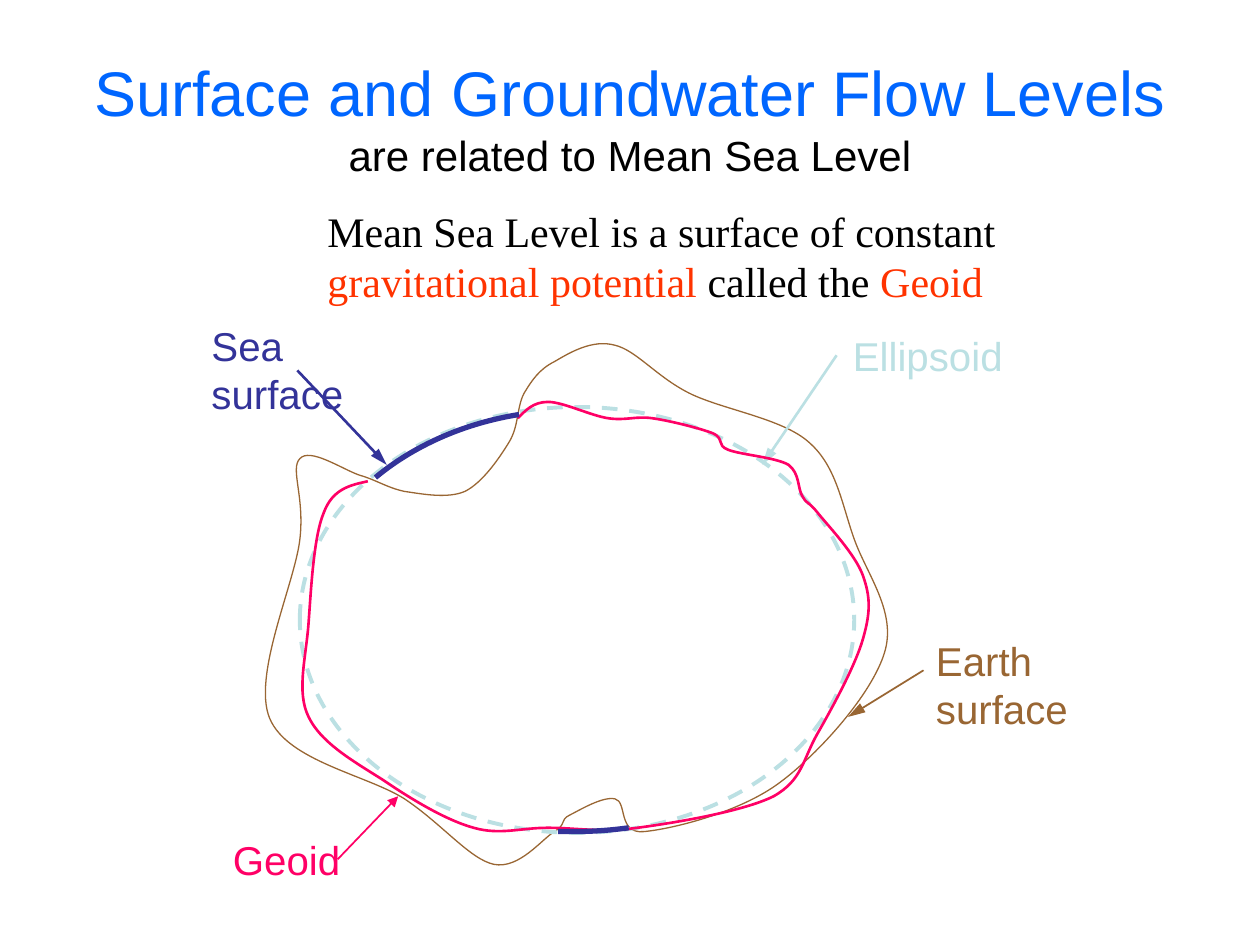
from lxml.etree import SubElement
from pptx import Presentation
from pptx.dml.color import RGBColor
from pptx.enum.dml import MSO_LINE
from pptx.enum.shapes import MSO_CONNECTOR, MSO_SHAPE
from pptx.enum.text import MSO_ANCHOR, PP_ALIGN
from pptx.oxml.ns import qn
from pptx.util import Pt

PX = 9144  # 100 px to the inch

BLACK = RGBColor(0x00, 0x00, 0x00)
TITLE_BLUE = RGBColor(0x00, 0x66, 0xFF)
HIGHLIGHT_RED = RGBColor(0xFF, 0x33, 0x00)
EARTH_BROWN = RGBColor(0x99, 0x66, 0x33)
ELLIPSOID_TEAL = RGBColor(0xBB, 0xE0, 0xE3)
SEA_BLUE = RGBColor(0x33, 0x33, 0x99)
GEOID_PINK = RGBColor(0xFF, 0x00, 0x66)

# Each curve is a start point, then two control points and an end point per segment.
EARTH_CURVE = [
    (285, 377),
    (299, 381), (307, 387), (321, 390),
    (335, 392), (355, 396), (369, 390),
    (383, 383), (396, 364), (404, 351),
    (412, 338), (410, 323), (416, 312),
    (422, 302), (428, 293), (440, 287),
    (452, 280), (470, 269), (488, 274),
    (505, 278), (521, 299), (547, 312),
    (573, 325), (621, 332), (642, 351),
    (664, 370), (668, 400), (678, 428),
    (688, 456), (712, 486), (702, 518),
    (692, 551), (650, 598), (619, 621),
    (587, 645), (533, 658), (511, 660),
    (490, 662), (498, 636), (488, 634),
    (478, 632), (460, 643), (452, 647),
    (444, 651), (450, 654), (440, 660),
    (430, 666), (412, 690), (392, 686),
    (373, 682), (351, 654), (321, 634),
    (291, 615), (228, 604), (214, 570),
    (200, 536), (234, 463), (238, 428),
    (242, 394), (230, 372), (238, 364),
    (246, 355), (271, 372), (285, 377),
]
GEOID_CURVE = [
    (411, 332),
    (417, 326), (423, 319), (435, 319),
    (447, 319), (469, 330), (483, 332),
    (497, 334), (505, 330), (518, 332),
    (532, 334), (556, 340), (566, 344),
    (576, 349), (568, 353), (578, 357),
    (588, 361), (616, 363), (626, 369),
    (635, 376), (633, 388), (637, 394),
    (641, 401), (641, 397), (649, 407),
    (657, 417), (679, 440), (685, 457),
    (691, 474), (691, 486), (685, 507),
    (679, 528), (661, 561), (649, 582),
    (637, 603), (637, 619), (614, 632),
    (590, 644), (536, 653), (506, 657),
    (477, 661), (457, 657), (435, 657),
    (413, 657), (397, 663), (376, 657),
    (354, 651), (326, 634), (304, 619),
    (282, 605), (255, 590), (245, 569),
    (235, 549), (243, 522), (245, 494),
    (247, 467), (249, 426), (257, 407),
    (264, 388), (278, 385), (292, 382),
]
UPPER_SEA_CURVE = [(298, 379), (328, 354), (368, 336), (412, 329)]
LOWER_SEA_CURVE = [
    (499, 657),
    (485, 659), (470, 660), (456, 660),
    (451, 660), (447, 660), (443, 660),
]

presentation = Presentation()
presentation.slide_width = 1000 * PX
presentation.slide_height = 750 * PX
slide = presentation.slides.add_slide(presentation.slide_layouts[6])
shapes = slide.shapes


def add_curve(points, color, width, close=False):
    """Draw a smooth outline, turning each three points into one Bézier segment."""
    builder = shapes.build_freeform(*points[0], scale=PX)
    builder.add_line_segments(points[1:], close=close)
    shape = builder.convert_to_shape()
    outline = shape._element.find(".//" + qn("a:path"))
    lines = outline.findall(qn("a:lnTo"))
    for first in range(0, len(lines), 3):
        segment = lines[first:first + 3]
        curve = SubElement(outline, qn("a:cubicBezTo"))
        segment[0].addprevious(curve)
        for line in segment:
            curve.append(line[0])
            outline.remove(line)
    shape.shadow.inherit = False
    shape.fill.background()
    shape.line.color.rgb = color
    shape.line.width = Pt(width)


def add_text(box, lines, font_name, wrap=False):
    """Add a text box; each line is a list of (text, size, color) runs."""
    text_box = shapes.add_textbox(*(length * PX for length in box))
    text_frame = text_box.text_frame
    text_frame.word_wrap = wrap
    for index, runs in enumerate(lines):
        paragraph = text_frame.paragraphs[0] if index == 0 else text_frame.add_paragraph()
        for text, size, color in runs:
            run = paragraph.add_run()
            run.text = text
            run.font.name = font_name
            run.font.size = Pt(size)
            run.font.color.rgb = color
    return text_frame


title = add_text(
    (50, 30, 900, 125),
    [[("Surface and Groundwater Flow Levels ", 36, TITLE_BLUE),
      ("are related to Mean Sea Level", 24, BLACK)]],
    "Arial", wrap=True)
title.vertical_anchor = MSO_ANCHOR.MIDDLE
title.paragraphs[0].alignment = PP_ALIGN.CENTER

add_curve(EARTH_CURVE, EARTH_BROWN, 0.75, close=True)

ellipsoid = shapes.add_shape(MSO_SHAPE.OVAL, 238 * PX, 323 * PX, 440 * PX, 338 * PX)
ellipsoid.shadow.inherit = False
ellipsoid.fill.background()
ellipsoid.line.color.rgb = ELLIPSOID_TEAL
ellipsoid.line.width = Pt(2.25)
ellipsoid.line.dash_style = MSO_LINE.DASH

for start_x, start_y, end_x, end_y, color, width, head_length in [
    (236, 294, 307, 369, SEA_BLUE, 1.5, "lg"),
    (664, 282, 605, 369, ELLIPSOID_TEAL, 1.5, "lg"),
    (733, 532, 673, 569, EARTH_BROWN, 1, "lg"),
    (268, 682, 316, 632, GEOID_PINK, 1, "med"),
]:
    arrow = shapes.add_connector(
        MSO_CONNECTOR.STRAIGHT, start_x * PX, start_y * PX, end_x * PX, end_y * PX)
    arrow.line.color.rgb = color
    arrow.line.width = Pt(width)
    SubElement(arrow.line._get_or_add_ln(), qn("a:tailEnd"),
               type="triangle", w="med", len=head_length)
    SubElement(arrow._element.spPr, qn("a:effectLst"))

add_curve(GEOID_CURVE, GEOID_PINK, 1.5)
add_curve(UPPER_SEA_CURVE, SEA_BLUE, 3)
add_curve(LOWER_SEA_CURVE, SEA_BLUE, 3)

# A wide right margin breaks the two-word labels after the first word.
for label, left, top, width, margin_right, color in [
    ("Earth surface", 733, 500, 210, 60, EARTH_BROWN),
    ("Ellipsoid", 667, 258, 139, 0, ELLIPSOID_TEAL),
    ("Sea surface", 158, 250, 190, 60, SEA_BLUE),
    ("Geoid", 175, 658, 105, 0, GEOID_PINK),
]:
    label_frame = add_text(
        (left, top, width, 48), [[(label, 23, color)]], "Arial", wrap=" " in label)
    label_frame.margin_right = margin_right * PX

add_text(
    (250, 158, 558, 90),
    [[("Mean Sea Level is a surface of constant", 24, BLACK)],
     [("gravitational potential", 24, HIGHLIGHT_RED),
      (" called the ", 24, BLACK),
      ("Geoid", 24, HIGHLIGHT_RED)]],
    "Times New Roman")

presentation.save("out.pptx")
